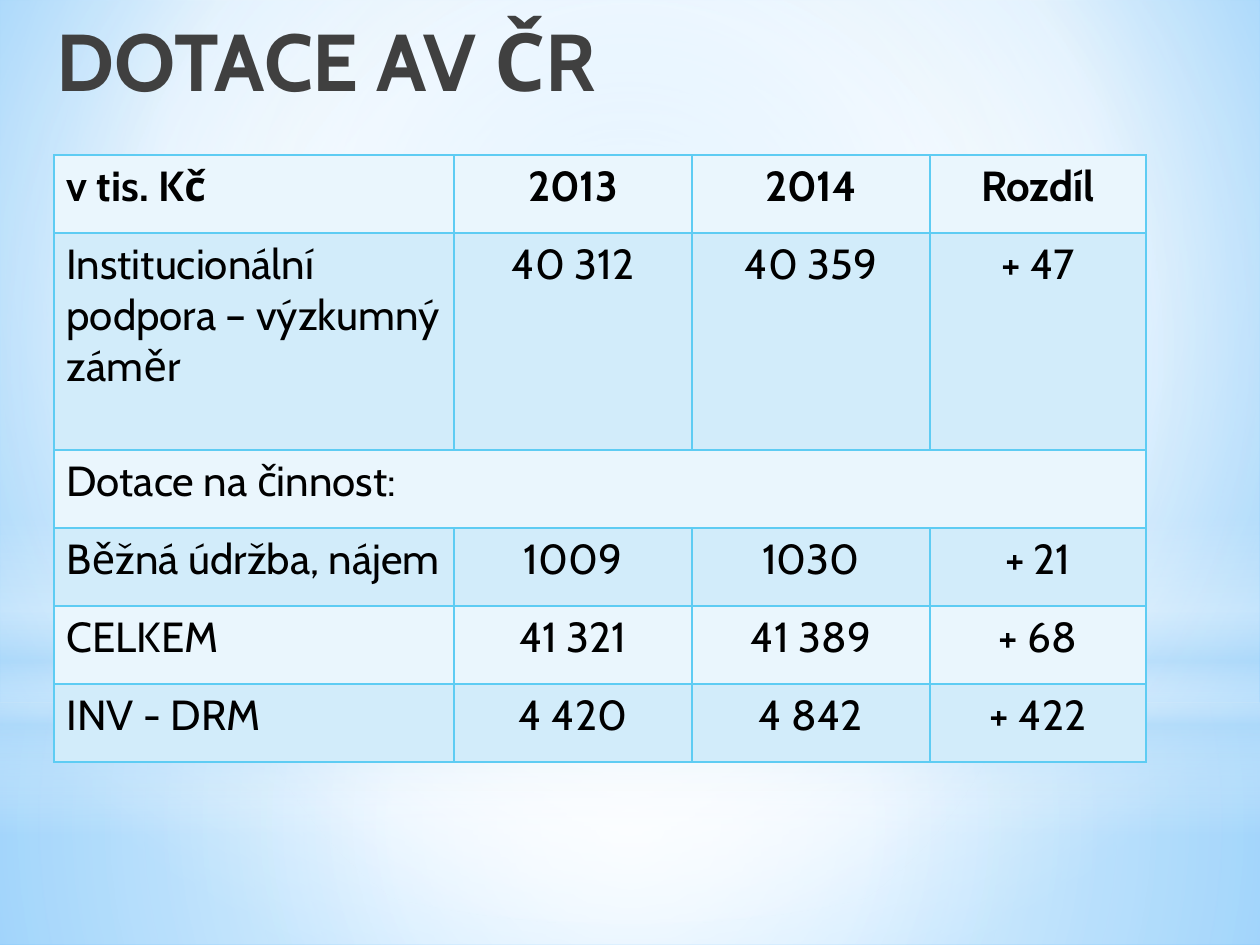
from dataclasses import dataclass

from lxml import etree
from pptx import Presentation
from pptx.dml.color import RGBColor
from pptx.enum.shapes import MSO_SHAPE
from pptx.enum.text import MSO_ANCHOR, PP_ALIGN
from pptx.oxml.ns import qn
from pptx.util import Emu, Pt

RECTANGLE, OVAL = MSO_SHAPE.RECTANGLE, MSO_SHAPE.OVAL
LEFT, CENTER = PP_ALIGN.LEFT, PP_ALIGN.CENTER
TOP = MSO_ANCHOR.TOP
EMU_PER_INCH, PX_PER_INCH = 914400, 126
SLIDE_WIDTH, SLIDE_HEIGHT = 1260, 945
MIDDLE = (50, 50, 50, 50)


@dataclass(frozen=True)
class Theme:
    font: str = "Cabin"
    title_size: int = 46
    table_size: int = 24
    title: str = "404040"
    text: str = "000000"
    border: str = "5ECCF3"
    border_width: int = 1
    bands: tuple = ("EAF6FD", "D2ECFA")
    white: str = "FFFFFF"
    haze: str = "B4DCFA"
    sky_edge: str = "5BB9FF"
    sky_core: str = "9ED5FF"


def px(length):
    return Emu(round(length * EMU_PER_INCH / PX_PER_INCH))


def add_node(parent, tag, **attributes):
    values = {name: str(value) for name, value in attributes.items()}
    return etree.SubElement(parent, qn(tag), values)


def set_gradient(properties, stops, focus=None):
    """Swap a solid fill for (position, colour, opacity) stops, radial if focus is given."""
    solid = properties.find(qn("a:solidFill"))
    gradient = etree.Element(qn("a:gradFill"), rotWithShape="1")
    stop_list = add_node(gradient, "a:gsLst")
    for position, color, opacity in stops:
        stop = add_node(stop_list, "a:gs", pos=position * 1000)
        shade = add_node(stop, "a:srgbClr", val=color)
        if opacity < 100:
            add_node(shade, "a:alpha", val=opacity * 1000)
    if focus:
        radial = add_node(gradient, "a:path", path="circle")
        sides = {side: percent * 1000 for side, percent in zip("ltrb", focus)}
        add_node(radial, "a:fillToRect", **sides)
    else:
        add_node(gradient, "a:lin", ang=90 * 60000, scaled=0)
    properties.replace(solid, gradient)


class SlideBuilder:
    def __init__(self, deck, theme):
        self.theme = theme
        self.slide = deck.slides.add_slide(deck.slide_layouts[6])

    def background(self, stops, focus):
        self.slide.background.fill.solid()
        properties = self.slide.element.find(".//" + qn("p:bgPr"))
        set_gradient(properties, stops, focus)

    def glow(self, kind, top, height, stops, focus=None):
        """Add a full-width shape with a translucent gradient."""
        shape = self.slide.shapes.add_shape(kind, 0, px(top), px(SLIDE_WIDTH), px(height))
        shape.shadow.inherit = False
        shape.line.fill.background()
        shape.fill.solid()
        set_gradient(shape.element.spPr, stops, focus)

    def set_text(self, frame, text, size, color, bold=False, align=LEFT):
        frame.text = text
        para = frame.paragraphs[0]
        para.alignment = align
        for span in para.runs:
            span.font.name = self.theme.font
            span.font.size = Pt(size)
            span.font.bold = bold
            span.font.color.rgb = RGBColor.from_string(color)

    def title(self, text, left, top, width, height):
        box = self.slide.shapes.add_textbox(px(left), px(top), px(width), px(height))
        frame = box.text_frame
        frame.word_wrap = True
        frame.vertical_anchor = TOP
        self.set_text(frame, text, self.theme.title_size, self.theme.title, bold=True)

    def style_cell(self, cell, band):
        properties = cell._tc.get_or_add_tcPr()
        for tag in ("a:lnL", "a:lnR", "a:lnT", "a:lnB"):
            line = add_node(properties, tag, w=int(Pt(self.theme.border_width)))
            add_node(add_node(line, "a:solidFill"), "a:srgbClr", val=self.theme.border)
        cell.fill.solid()
        cell.fill.fore_color.rgb = RGBColor.from_string(band)

    def table(self, rows, left, top, widths, heights):
        """Add a banded table; a row with a single text spans all columns."""
        frame = self.slide.shapes.add_table(
            len(rows), len(widths), px(left), px(top), px(sum(widths)), px(sum(heights)))
        table = frame.table
        for column, width in zip(table.columns, widths):
            column.width = px(width)
        for index, (texts, height) in enumerate(zip(rows, heights)):
            table.rows[index].height = px(height)
            band = self.theme.bands[index % len(self.theme.bands)]
            for cell in table.rows[index].cells:
                self.style_cell(cell, band)
            if len(texts) == 1:
                table.cell(index, 0).merge(table.cell(index, len(widths) - 1))
            for column, text in enumerate(texts):
                self.set_text(table.cell(index, column).text_frame, text,
                              self.theme.table_size, self.theme.text,
                              bold=index == 0, align=CENTER if column else LEFT)


def main():
    deck = Presentation()
    deck.slide_width, deck.slide_height = px(SLIDE_WIDTH), px(SLIDE_HEIGHT)
    theme = Theme()
    white, haze = theme.white, theme.haze
    page = SlideBuilder(deck, theme)

    page.background([(0, theme.sky_core, 100), (60, white, 100), (100, theme.sky_edge, 100)],
                    (20, 10, 20, 60))
    horizon = 703
    page.glow(RECTANGLE, horizon, SLIDE_HEIGHT - horizon,
              [(0, white, 91), (37, white, 76), (100, haze, 79)], MIDDLE)
    page.glow(RECTANGLE, 0, horizon,
              [(0, white, 89), (48, white, 62), (100, haze, 79)], MIDDLE)
    page.glow(RECTANGLE, 519, 315,
              [(0, white, 0), (29, white, 30), (45, haze, 40),
               (55, white, 26), (65, haze, 60), (100, white, 0)])
    page.glow(OVAL, 220, horizon, [(0, white, 100), (56, white, 0)], MIDDLE)

    page.title("DOTACE AV ČR", 44, 5, 1216, 158)
    rows = [
        ("v tis. Kč", "2013", "2014", "Rozdíl"),
        ("Institucionální podpora – výzkumný záměr", "40 312", "40 359", "+ 47"),
        ("Dotace na činnost:",),
        ("Běžná údržba, nájem", "1009", "1030", "+ 21"),
        ("CELKEM", "41 321", "41 389", "+ 68"),
        ("INV - DRM", "4 420", "4 842", "+ 422"),
    ]
    row_height, tall_row_height = 78, 217
    heights = [row_height, tall_row_height] + [row_height] * 4
    page.table(rows, 54, 155, (400, 238, 238, 216), heights)
    deck.save("out.pptx")


if __name__ == "__main__":
    main()
